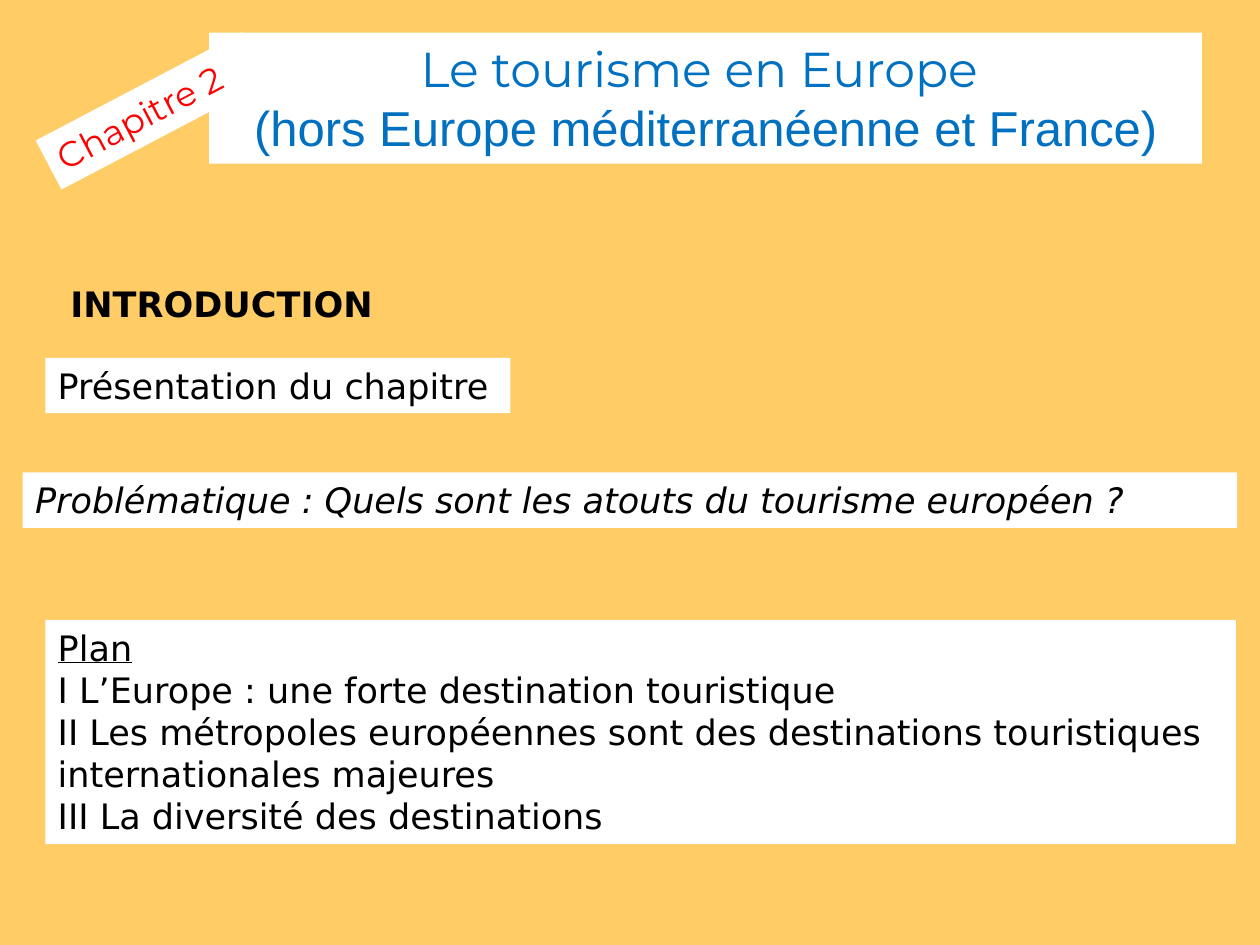
import pptx
import pptx.util
import pptx.dml.color
import pptx.enum.text
from pptx.util import Inches

COLORS = {"background": "FFCC66", "panel": "FFFFFF", "title": "0070C0",
          "chapter": "FF0000", "body": "000000"}


def rgb(name):
    return pptx.dml.color.RGBColor.from_string(COLORS[name])


class ChapterSlide:
    title_font = "Montserrat"
    subtitle_font = "Arial"
    body_font = "DejaVu Sans"
    title_size = 28
    body_size = 20

    def __init__(self, deck):
        self.page = deck.slides.add_slide(deck.slide_layouts[6])
        fill = self.page.background.fill
        fill.solid()
        fill.fore_color.rgb = rgb("background")

    def add_box(self, left, top, width, height, panel=True, rotation=0):
        box = self.page.shapes.add_textbox(
            Inches(left), Inches(top), Inches(width), Inches(height))
        box.rotation = rotation
        if panel:
            box.fill.solid()
            box.fill.fore_color.rgb = rgb("panel")
        frame = box.text_frame
        frame.word_wrap = True
        frame.auto_size = pptx.enum.text.MSO_AUTO_SIZE.SHAPE_TO_FIT_TEXT
        return frame

    def add_line(self, frame, text, font=body_font, size=body_size,
                 color="body", centered=False, **emphasis):
        """Write one paragraph; emphasis takes bold, italic or underline."""
        first = frame.paragraphs[0]
        para = frame.add_paragraph() if first.runs else first
        if centered:
            para.alignment = pptx.enum.text.PP_ALIGN.CENTER
        span = para.add_run()
        span.text = text
        span.font.name = font
        span.font.size = pptx.util.Pt(size)
        span.font.color.rgb = rgb(color)
        for name, value in emphasis.items():
            setattr(span.font, name, value)

    def add_title(self):
        frame = self.add_box(1.66, 0.26, 7.88, 1.04)
        for text, font in (
                ("Le tourisme en Europe ", self.title_font),
                ("(hors Europe méditerranéenne et France)", self.subtitle_font)):
            self.add_line(frame, text, font, self.title_size, "title", centered=True)

    def add_chapter_label(self):
        frame = self.add_box(0.28, 0.66, 1.85, 0.44, rotation=332.3)
        self.add_line(frame, "Chapitre 2", self.title_font, color="chapter")

    def add_statement(self, text, left, top, width, panel=True, **emphasis):
        frame = self.add_box(left, top, width, 0.44, panel)
        self.add_line(frame, text, **emphasis)

    def add_plan(self, heading, parts):
        frame = self.add_box(0.36, 4.92, 9.45, 1.78)
        self.add_line(frame, heading, underline=True)
        for part in parts:
            self.add_line(frame, part)


def main():
    deck = pptx.Presentation()
    deck.slide_width, deck.slide_height = Inches(10), Inches(7.5)

    slide = ChapterSlide(deck)
    slide.add_title()
    slide.add_chapter_label()
    slide.add_statement("INTRODUCTION", 0.46, 2.19, 2.83, panel=False, bold=True)
    slide.add_statement("Problématique : Quels sont les atouts du tourisme européen ?",
                        0.18, 3.75, 9.64, italic=True)
    slide.add_statement("Présentation du chapitre", 0.36, 2.84, 3.69)
    slide.add_plan("Plan", (
        "I L’Europe : une forte destination touristique",
        "II Les métropoles européennes sont des destinations touristiques "
        "internationales majeures",
        "III La diversité des destinations",
    ))
    deck.save("out.pptx")


if __name__ == "__main__":
    main()
